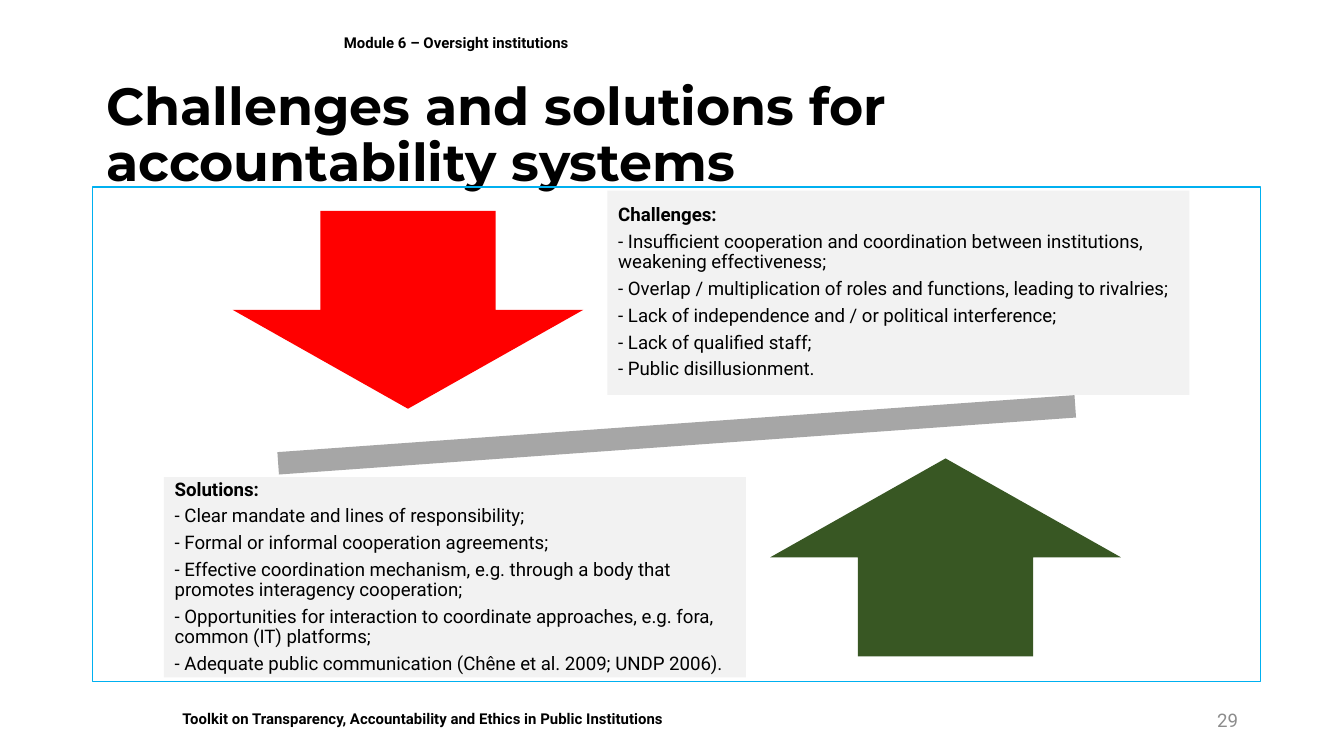
import pptx
import pptx.util
import pptx.dml.color
import pptx.enum.shapes
import pptx.enum.text
import pptx.oxml.ns
from lxml import etree

Pt = pptx.util.Pt
SHAPE = pptx.enum.shapes.MSO_SHAPE
ANCHOR = pptx.enum.text.MSO_ANCHOR
ALIGN = pptx.enum.text.PP_ALIGN

COLORS = {
    "text": "000000", "number": "8C8C8C", "paper": "FFFFFF", "panel": "F2F2F2",
    "frame": "00B0F0", "beam": "A6A6A6", "down": "FF0000", "up": "385723",
}
TITLE = "Challenges and solutions for accountability systems"
MODULE = "Module 6 – Oversight institutions"
TOOLKIT = "Toolkit on Transparency, Accountability and Ethics in Public Institutions"
NUMBER = "29"
PANELS = [
    ((325.4, 102.2, 311.8, 109.4), [
        "Challenges:",
        "- Insufficient cooperation and coordination between institutions, weakening effectiveness;",
        "- Overlap / multiplication of roles and functions, leading to rivalries;",
        "- Lack of independence and / or political interference;",
        "- Lack of qualified staff;",
        "- Public disillusionment.",
    ]),
    ((87.8, 255.6, 311.8, 107.3), [
        "Solutions:",
        "- Clear mandate and lines of responsibility;",
        "- Formal or informal cooperation agreements;",
        "- Effective coordination mechanism, e.g. through a body that promotes interagency cooperation;",
        "- Opportunities for interaction to coordinate approaches, e.g. fora, common (IT) platforms;",
        "- Adequate public communication (Chêne et al. 2009; UNDP 2006).",
    ]),
]
SHAPES = [
    (SHAPE.MATH_MINUS, (71.3, 207.4, 582.5, 51.1), "beam", 355.9),
    (SHAPE.DOWN_ARROW, (124.6, 113, 187.9, 106), "down", 0),
    (SHAPE.UP_ARROW, (412.6, 245.6, 187.9, 106), "up", 0),
]


def rgb(name):
    return pptx.dml.color.RGBColor.from_string(COLORS[name])


def place(sp, box):
    sp.left, sp.top, sp.width, sp.height = [Pt(v) for v in box]


def paint(sp, color):
    sp.fill.solid()
    sp.fill.fore_color.rgb = rgb(color)


def style(p, size, font="Roboto", color="text", bold=False, align=ALIGN.LEFT):
    p.alignment = align
    for r in p.runs:
        r.font.size = Pt(size)
        r.font.name = font
        r.font.bold = bold
        r.font.color.rgb = rgb(color)


def setup(tf, anchor=ANCHOR.MIDDLE):
    tf.word_wrap = True
    tf.auto_size = pptx.enum.text.MSO_AUTO_SIZE.NONE
    tf.vertical_anchor = anchor


def add_label(s, box, text, anchor=ANCHOR.MIDDLE, **look):
    sp = s.shapes.add_textbox(*[Pt(v) for v in box])
    setup(sp.text_frame, anchor)
    sp.text_frame.text = text
    style(sp.text_frame.paragraphs[0], **look)
    return sp


def add_shape(s, kind, box):
    sp = s.shapes.add_shape(kind, *[Pt(v) for v in box])
    sp.shadow.inherit = False
    return sp


def fill_panel(sp, box, lines):
    place(sp, box)
    paint(sp, "panel")
    tf = sp.text_frame
    setup(tf)
    tf.margin_left = tf.margin_right = tf.margin_top = tf.margin_bottom = Pt(5.8)
    tf.text = "\n".join(lines)
    for i, p in enumerate(tf.paragraphs):
        pPr = p._p.get_or_add_pPr()
        pPr.set("marL", "0")
        pPr.set("indent", "0")
        etree.SubElement(pPr, pptx.oxml.ns.qn("a:buNone"))
        p.line_spacing = 0.9
        p.space_before = Pt(0)
        p.space_after = Pt(3.5)
        style(p, 10, bold=i == 0)


prs = pptx.Presentation()
prs.slide_width, prs.slide_height = Pt(720), Pt(405)
s = prs.slides.add_slide(prs.slide_layouts[3])

title = s.shapes.title
place(title, (49.7, 46.1, 620.6, 54))
setup(title.text_frame)
title.text_frame.text = TITLE
title.text_frame.paragraphs[0].line_spacing = 0.9
style(title.text_frame.paragraphs[0], 28, "Montserrat", bold=True)

for idx, (box, lines) in enumerate(PANELS, 1):
    fill_panel(s.placeholders[idx], box, lines)

footer = add_label(s, (90.7, 376.6, 516.2, 17.3), TOOLKIT, ANCHOR.TOP, size=8, bold=True)
paint(footer, "paper")
add_label(s, (177.1, 7.2, 493.2, 31.7), MODULE, size=8, bold=True)

frame = add_shape(s, SHAPE.RECTANGLE, (49.7, 100.1, 625.7, 265))
frame.fill.background()
frame.line.color.rgb = rgb("frame")
frame.line.width = Pt(0.75)

for kind, box, color, angle in SHAPES:
    sp = add_shape(s, kind, box)
    paint(sp, color)
    sp.line.fill.background()
    sp.rotation = angle

add_label(s, (508.3, 375.1, 162, 21.6), NUMBER, size=10, color="number", align=ALIGN.RIGHT)

prs.save("out.pptx")
